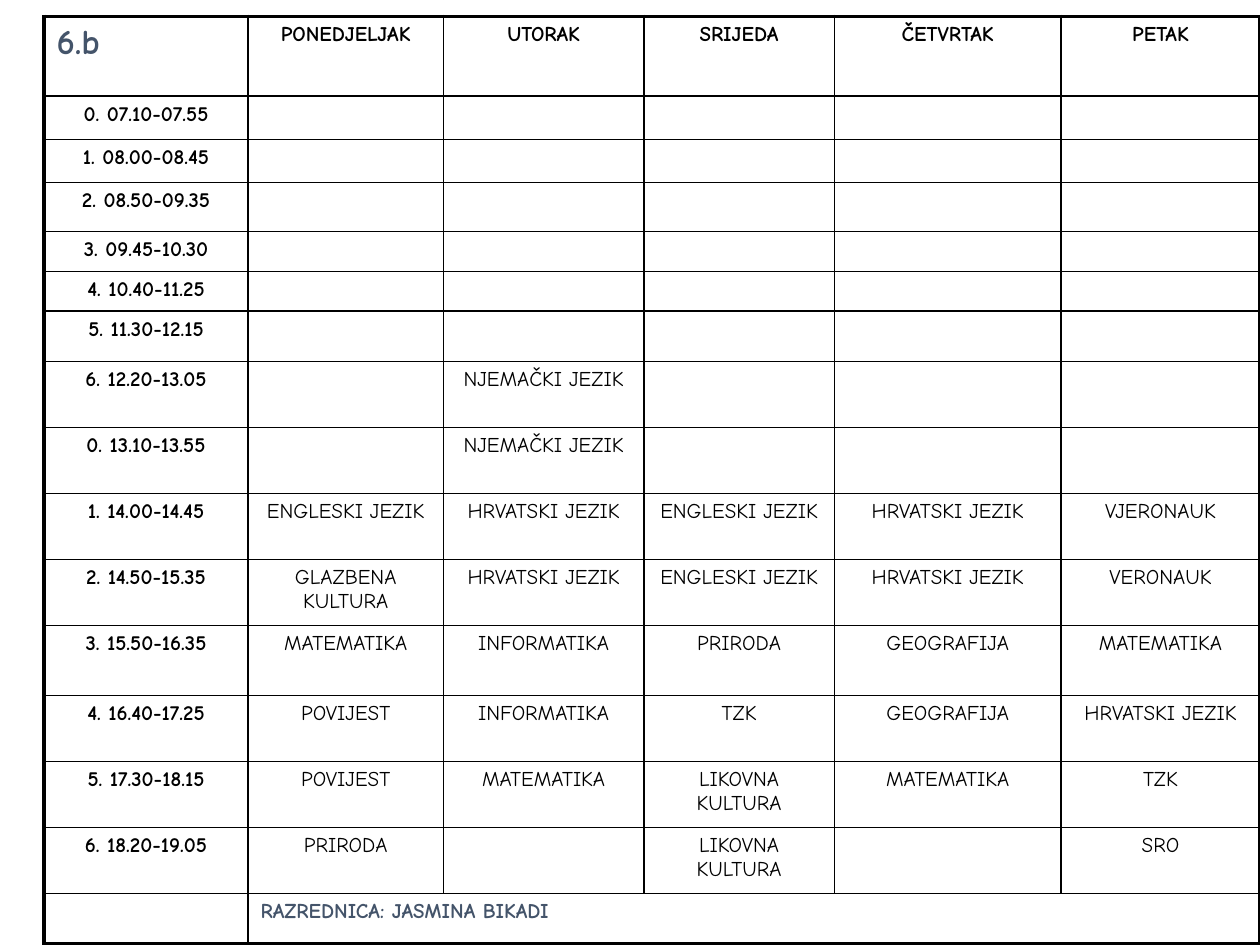
from lxml.etree import SubElement
from pptx import Presentation
from pptx.dml.color import RGBColor
from pptx.enum.text import PP_ALIGN
from pptx.oxml.ns import qn
from pptx.util import Cm, Pt

FONT = "Comic Neue"
COLORS = {"ink": "000000", "slate": "44546A"}
THIN, THICK = 1, 2.25

WIDTHS = [4.11, 3.94, 4.04, 3.84, 4.57, 4.01]
HEIGHTS = [1.61, 0.87, 0.87, 0.99, 0.8, 0.8, 1.02] + [1.33] * 4 + [1.41] + [1.33] * 3 + [1.02]

ENG, HRV, NJEM = "ENGLESKI JEZIK", "HRVATSKI JEZIK", "NJEMAČKI JEZIK"
MAT, INF, GEO = "MATEMATIKA", "INFORMATIKA", "GEOGRAFIJA"
LIK = "LIKOVNA KULTURA"
FREE = [""] * 5
ROWS = [
    ["6.b", "PONEDJELJAK", "UTORAK", "SRIJEDA", "ČETVRTAK", "PETAK"],
    ["0. 07.10-07.55", *FREE],
    ["1. 08.00-08.45", *FREE],
    ["2. 08.50-09.35", *FREE],
    ["3. 09.45-10.30", *FREE],
    ["4. 10.40-11.25", *FREE],
    ["5. 11.30-12.15", *FREE],
    ["6. 12.20-13.05", "", NJEM, "", "", ""],
    ["0. 13.10-13.55", "", NJEM, "", "", ""],
    ["1. 14.00-14.45", ENG, HRV, ENG, HRV, "VJERONAUK"],
    ["2. 14.50-15.35", "GLAZBENA KULTURA", HRV, ENG, HRV, "VERONAUK"],
    ["3. 15.50-16.35", MAT, INF, "PRIRODA", GEO, MAT],
    ["4. 16.40-17.25", "POVIJEST", INF, "TZK", GEO, HRV],
    ["5. 17.30-18.15", "POVIJEST", MAT, LIK, MAT, "TZK"],
    ["6. 18.20-19.05", "PRIRODA", "", LIK, "", "SRO"],
    ["", "RAZREDNICA: JASMINA BIKADI", "", "", "", ""],
]


def write(cell, text, size=12, bold=False, color="ink", align=PP_ALIGN.CENTER):
    para = cell.text_frame.paragraphs[0]
    para.alignment = align
    if not text:
        # The end mark sets the line height of an empty cell.
        SubElement(para._p, qn("a:endParaRPr"), sz=str(size * 100))
        return
    run = para.add_run()
    run.text = text
    font = run.font
    font.name, font.size, font.bold = FONT, Pt(size), bold
    font.color.rgb = RGBColor.from_string(COLORS[color])


def frame(cell, left, right, top, bottom):
    """Draw the cell's four borders, with widths in points."""
    props = cell._tc.get_or_add_tcPr()
    for side, width in zip("LRTB", (left, right, top, bottom)):
        line = SubElement(props, qn(f"a:ln{side}"), w=str(Pt(width)))
        fill = SubElement(line, qn("a:solidFill"))
        SubElement(fill, qn("a:srgbClr"), val=COLORS["ink"])


def style(row, col):
    """Return the text format for a place in the timetable."""
    if (row, col) == (0, 0):
        return dict(size=20, bold=True, color="slate", align=PP_ALIGN.LEFT)
    if row == len(ROWS) - 1:
        return dict(bold=True, color="slate", align=PP_ALIGN.LEFT)
    return dict(bold=row == 0 or col == 0)


def add_grid(slide):
    last_row, last_col = len(ROWS) - 1, len(WIDTHS) - 1
    table = slide.shapes.add_table(
        len(ROWS), len(WIDTHS), Cm(0.89), Cm(0.33), Cm(sum(WIDTHS)), Cm(sum(HEIGHTS))
    ).table
    table.first_row = table.horz_banding = False
    for column, width in zip(table.columns, WIDTHS):
        column.width = Cm(width)
    for row, height in zip(table.rows, HEIGHTS):
        row.height = Cm(height)
    table.cell(last_row, 1).merge(table.cell(last_row, last_col))

    for r, texts in enumerate(ROWS):
        for c, text in enumerate(texts):
            cell = table.cell(r, c)
            if cell.is_spanned:
                continue
            end = c + cell.span_width - 1 if cell.is_merge_origin else c
            write(cell, text, **style(r, c))
            frame(
                cell,
                left=THICK if c == 0 else THIN,
                right=THICK if end == last_col else THIN,
                top=THICK if r == 0 else THIN,
                bottom=THICK if r == last_row else THIN,
            )
            cell.fill.background()


def main():
    deck = Presentation()
    deck.slide_width, deck.slide_height = Cm(25.4), Cm(19.05)
    slide = deck.slides.add_slide(deck.slide_layouts[6])
    add_grid(slide)
    deck.save("out.pptx")


if __name__ == "__main__":
    main()
